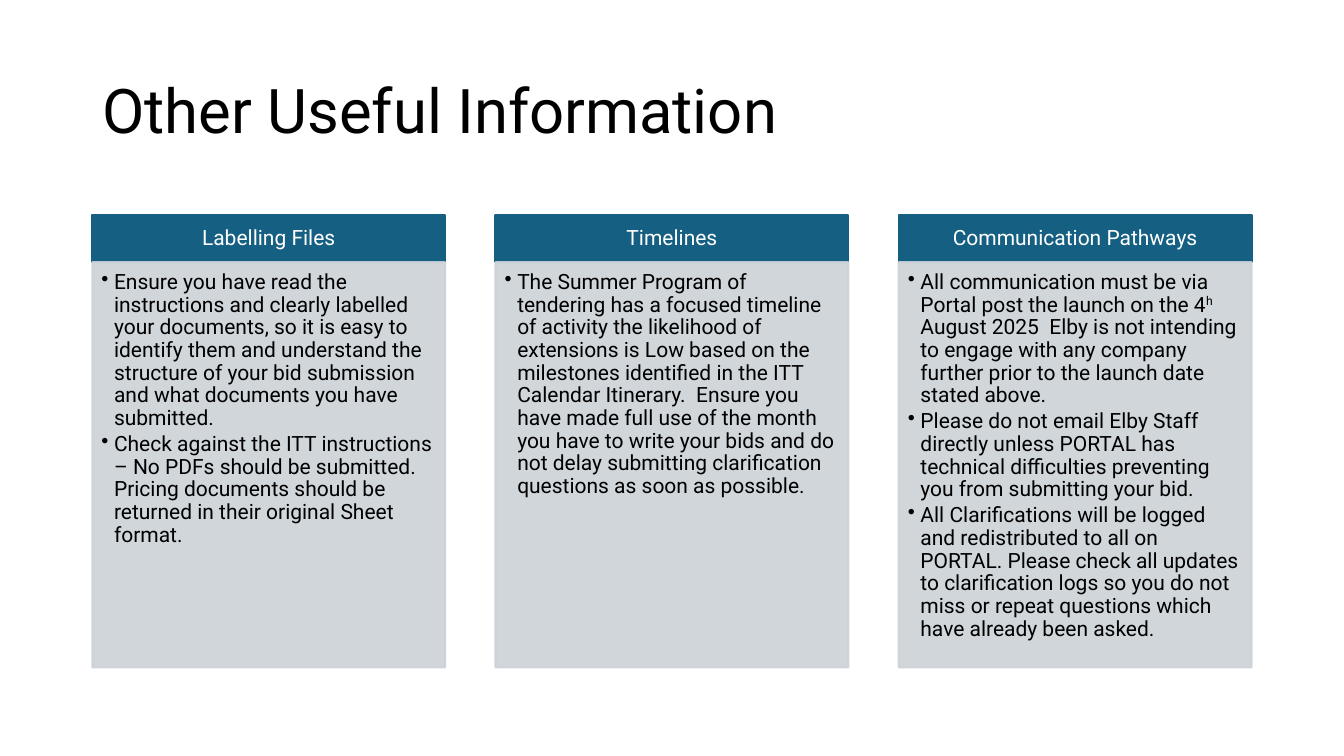
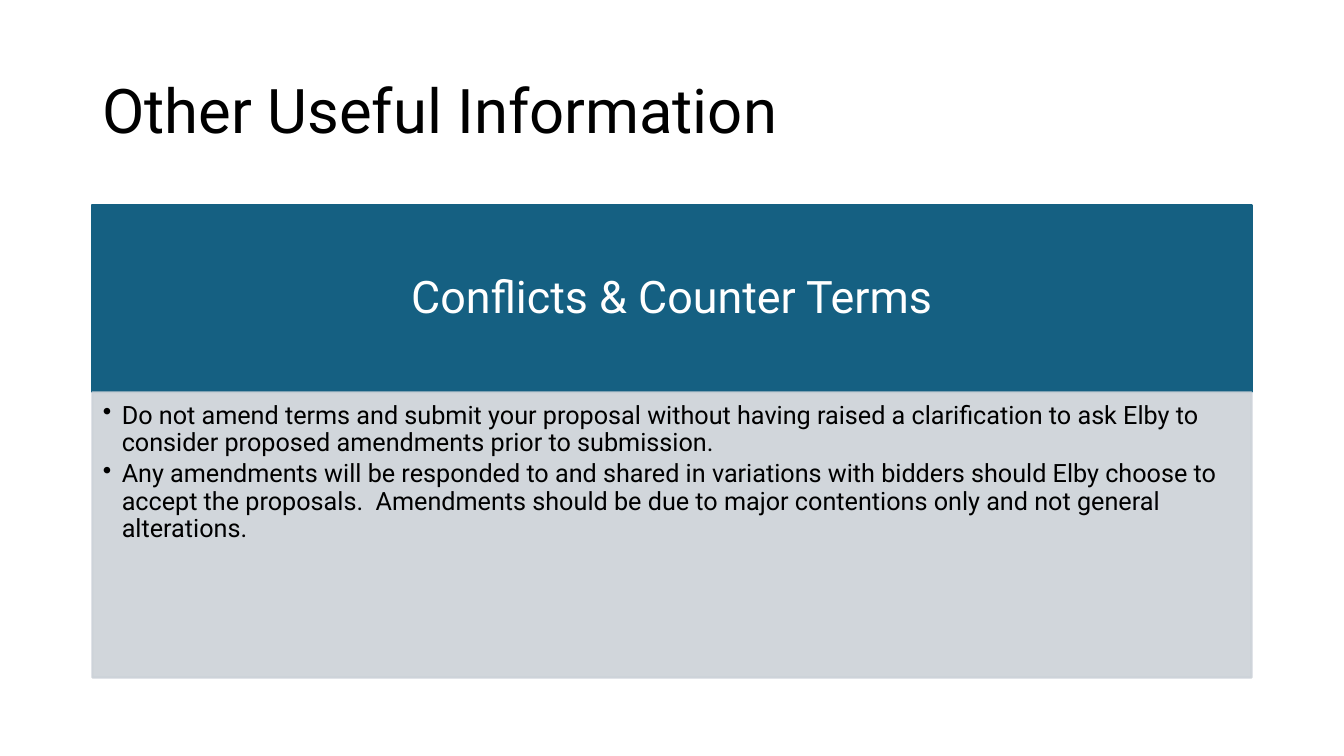
"""Build two slides of tender guidance in headed panels."""
import pptx
import pptx.util
import pptx.dml.color
import pptx.enum.shapes
import pptx.enum.text
import pptx.oxml.ns
import lxml.etree

Pt = pptx.util.Pt
ALIGN = pptx.enum.text.PP_ALIGN
ANCHOR = pptx.enum.text.MSO_ANCHOR
FONT = "Roboto"
BLACK, WHITE, TEAL, GREY = "000000", "FFFFFF", "156082", "CCD2D8"
TITLE = "Other Useful Information"
LEFT, WIDE = 66, 828


def paint(fill, tint, alpha=100):
    fill.solid()
    fill.fore_color.rgb = pptx.dml.color.RGBColor.from_string(tint)
    if alpha < 100:
        node = fill._xPr.find(".//" + pptx.oxml.ns.qn("a:srgbClr"))
        lxml.etree.SubElement(node, pptx.oxml.ns.qn("a:alpha"), val=str(alpha * 1000))


def write(shape, paras, size, tint, inset, anchor, align=ALIGN.LEFT, hang=0):
    frame = shape.text_frame
    frame.word_wrap = True
    frame.vertical_anchor = anchor
    frame.margin_left, frame.margin_top, frame.margin_right, frame.margin_bottom = map(Pt, inset)
    for rank, runs in enumerate(paras):
        para = frame.add_paragraph() if rank else frame.paragraphs[0]
        para.alignment = align
        para.line_spacing = 0.9
        if hang:
            para.space_after = Pt(size * 0.15)
            props = para._p.get_or_add_pPr()
            props.set("marL", str(Pt(hang)))
            props.set("indent", str(-Pt(hang)))
            lxml.etree.SubElement(props, pptx.oxml.ns.qn("a:buChar"), char="•")
        for text, base in runs:
            run = para.add_run()
            run.text = text
            run.font.name = FONT
            run.font.size = Pt(size)
            paint(run.font.fill, tint)
            if base:
                run.font._element.set("baseline", str(base * 1000))


files = [
    [("Ensure you have read the instructions and clearly labelled your documents, so it is easy to "
      "identify them and understand the structure of your bid submission and what documents you "
      "have submitted.", 0)],
    [("Check against the ITT instructions – No PDFs should be submitted. Pricing documents should "
      "be returned in their original Sheet format.", 0)],
]
times = [
    [("The Summer Program of tendering has a focused timeline of activity the likelihood of "
      "extensions is Low based on the milestones identified in the ITT Calendar Itinerary.  Ensure "
      "you have made full use of the month you have to write your bids and do not delay submitting "
      "clarification questions as soon as possible.", 0)],
]
paths = [
    [("All communication must be via Portal post the launch on the 4", 0), ("h ", 30),
     ("August 2025  Elby is not intending to engage with any company further prior to the launch "
      "date stated above.", 0)],
    [("Please do not email Elby Staff directly unless PORTAL has technical difficulties preventing "
      "you from submitting your bid.", 0)],
    [("All Clarifications will be logged and redistributed to all on PORTAL. Please check all "
      "updates to clarification logs so you do not miss or repeat questions which have already "
      "been asked.", 0)],
]
terms = [
    [("Do not amend terms and submit your proposal without having raised a clarification to ask "
      "Elby to consider proposed amendments prior to submission.", 0)],
    [("Any amendments will be responded to and shared in variations with bidders should Elby choose "
      "to accept the proposals.  Amendments should be due to major contentions only and not "
      "general alterations.", 0)],
]

pages = [
    {"cards": [("Labelling Files", files), ("Timelines", times), ("Communication Pathways", paths)],
     "width": 252, "top": 153.5, "head": 33.75, "body": 289.5, "sizes": (15, 15), "hang": 9,
     "insets": ((8.5, 5, 8.5, 5), (6.5, 6.5, 8.5, 9.5))},
    {"cards": [("Conflicts & Counter Terms", terms)],
     "width": WIDE, "top": 146.25, "head": 134, "body": 203.75, "sizes": (32, 18), "hang": 13.5,
     "insets": ((18, 10, 18, 10), (7.5, 7.5, 10, 11.5))},
]

deck = pptx.Presentation()
deck.slide_width, deck.slide_height = Pt(960), Pt(540)

for page in pages:
    slide = deck.slides.add_slide(deck.slide_layouts[6])
    title = slide.shapes.add_textbox(Pt(LEFT), Pt(28.75), Pt(WIDE), Pt(104.5))
    write(title, [[(TITLE, 0)]], 44, BLACK, (7.2, 3.6, 7.2, 3.6), ANCHOR.MIDDLE)

    cards, width, top = page["cards"], page["width"], page["top"]
    step = (WIDE - width) / max(len(cards) - 1, 1)
    for place, (name, points) in enumerate(cards):
        left = LEFT + place * step
        panels = []
        for y, height, tint, alpha in (
            (top, page["head"], TEAL, 100),
            (top + page["head"], page["body"], GREY, 90),
        ):
            panel = slide.shapes.add_shape(
                pptx.enum.shapes.MSO_SHAPE.RECTANGLE, Pt(left), Pt(y), Pt(width), Pt(height))
            panel.shadow.inherit = False
            paint(panel.fill, tint, alpha)
            paint(panel.line.fill, tint, alpha)
            panel.line.width = Pt(1.5)
            panels.append(panel)
        head, body = panels
        write(head, [[(name, 0)]], page["sizes"][0], WHITE, page["insets"][0],
              ANCHOR.MIDDLE, ALIGN.CENTER)
        write(body, points, page["sizes"][1], BLACK, page["insets"][1],
              ANCHOR.TOP, hang=page["hang"])

deck.save("out.pptx")
